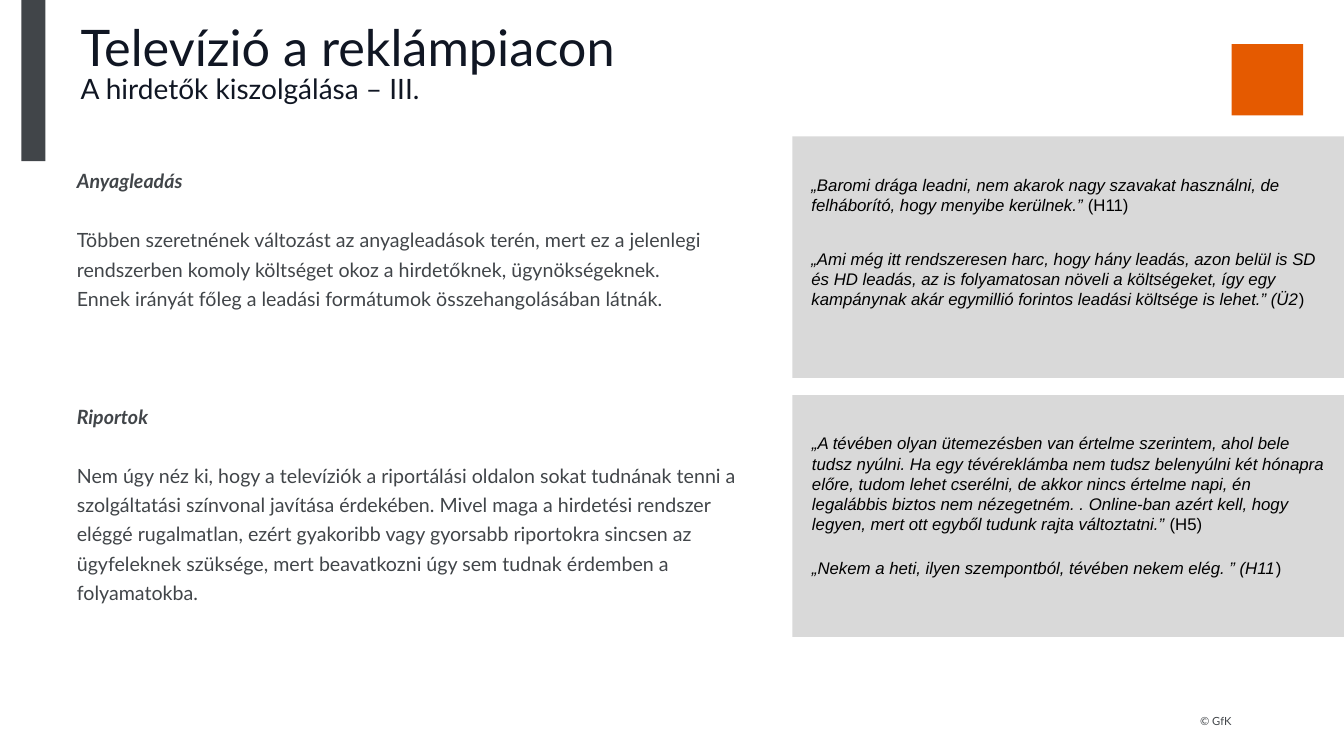
"""Builds the slide on serving television advertisers."""
from dataclasses import dataclass

from pptx import Presentation
from pptx.dml.color import RGBColor
from pptx.enum.shapes import MSO_SHAPE
from pptx.enum.text import MSO_ANCHOR, MSO_AUTO_SIZE, PP_ALIGN
from pptx.slide import Slide
from pptx.text.text import TextFrame, _Paragraph
from pptx.util import Pt

COLORS = {"slate": "414549", "navy": "101623", "orange": "E55A00", "gray": "D9D9D9", "black": "000000"}


@dataclass
class Block:
    """A rectangle of plain colour."""
    left: float
    top: float
    width: float
    height: float
    color: str


@dataclass
class Quote:
    """An interview quote and the upright end of its source mark."""
    left: float
    top: float
    text: str
    ending: str


@dataclass
class Passage:
    """A paragraph of the main text."""
    text: str
    before: float = 0
    heading: bool = False


BLOCKS = [
    Block(886.3, 0, 0, 0, "orange"),
    Block(15.2, 0, 17.2, 115.2, "slate"),
    Block(566, 97.4, 394, 172.6, "gray"),
    Block(566, 282.3, 394, 172.6, "gray"),
]
BLOCKS[0] = Block(879.8, 31.5, 51, 51, "orange")

QUOTES = [
    Quote(579.6, 118.8, "„Baromi drága leadni, nem akarok nagy szavakat használni, de felháborító, "
          "hogy menyibe kerülnek.” ", "(H11)"),
    Quote(579.6, 171.6, "„Ami még itt rendszeresen harc, hogy hány leadás, azon belül is SD és HD leadás, "
          "az is folyamatosan növeli a költségeket, így egy kampánynak akár egymillió forintos "
          "leadási költsége is lehet.” (Ü2", ")"),
    Quote(580, 303.6, "„A tévében olyan ütemezésben van értelme szerintem, ahol bele tudsz nyúlni. "
          "Ha egy tévéreklámba nem tudsz belenyúlni két hónapra előre, tudom lehet cserélni, de akkor "
          "nincs értelme napi, én legalábbis biztos nem nézegetném. . Online-ban azért kell, hogy legyen, "
          "mert ott egyből tudunk rajta változtatni.” ", "(H5)"),
    Quote(580, 392.4, "„Nekem a heti, ilyen szempontból, tévében nekem elég. ” (H11", ")"),
]

PASSAGES = [
    Passage("Anyagleadás", heading=True),
    Passage("Többen szeretnének változást az anyagleadások terén, mert ez a jelenlegi rendszerben komoly "
            "költséget okoz a hirdetőknek, ügynökségeknek.", 21),
    Passage("Ennek irányát főleg a leadási formátumok összehangolásában látnák."),
    Passage("Riportok", 63, True),
    Passage("Nem úgy néz ki, hogy a televíziók a riportálási oldalon sokat tudnának tenni a szolgáltatási "
            "színvonal javítása érdekében. Mivel maga a hirdetési rendszer eléggé rugalmatlan, ezért gyakoribb "
            "vagy gyorsabb riportokra sincsen az ügyfeleknek szüksége, mert beavatkozni úgy sem tudnak "
            "érdemben a folyamatokba.", 21),
]


def add_run(p: _Paragraph, text: str, *, size: float, font: str = "Lato", color: str = "slate",
            bold: bool = False, italic: bool = False) -> None:
    """Add formatted text to a paragraph."""
    r = p.add_run()
    r.text = text
    r.font.name, r.font.size = font, Pt(size)
    r.font.bold, r.font.italic = bold, italic
    r.font.color.rgb = RGBColor.from_string(COLORS[color])


def set_frame(tf: TextFrame, top: float = 0, anchor: MSO_ANCHOR = MSO_ANCHOR.TOP) -> None:
    """Set wrapping, margins and anchor of a text frame."""
    tf.word_wrap, tf.auto_size, tf.vertical_anchor = True, MSO_AUTO_SIZE.NONE, anchor
    tf.margin_left = tf.margin_right = tf.margin_bottom = 0
    tf.margin_top = Pt(top)


def add_box(s: Slide, left: float, top: float, width: float, height: float, *,
            margin_top: float = 0, anchor: MSO_ANCHOR = MSO_ANCHOR.TOP) -> TextFrame:
    """Add a text box and return its frame."""
    tf = s.shapes.add_textbox(Pt(left), Pt(top), Pt(width), Pt(height)).text_frame
    set_frame(tf, margin_top, anchor)
    return tf


def add_block(s: Slide, block: Block) -> None:
    """Draw a plain rectangle."""
    sp = s.shapes.add_shape(MSO_SHAPE.RECTANGLE, Pt(block.left), Pt(block.top), Pt(block.width), Pt(block.height))
    sp.shadow.inherit = False
    sp.fill.solid()
    sp.fill.fore_color.rgb = RGBColor.from_string(COLORS[block.color])
    sp.line.fill.background()


def add_title(s: Slide) -> None:
    """Place and fill the title."""
    sp = s.shapes.title
    sp.left, sp.top, sp.width, sp.height = Pt(57.6), Pt(18), Pt(608.4), Pt(38.9)
    set_frame(sp.text_frame)
    p = sp.text_frame.paragraphs[0]
    p.alignment, p.line_spacing = PP_ALIGN.LEFT, 0.85
    add_run(p, "Televízió a reklámpiacon", size=36, color="navy")
    p.add_line_break()
    add_run(p, "A hirdetők kiszolgálása – III.", size=20, color="navy")


def add_passages(s: Slide, passages: list[Passage]) -> None:
    """Write the main text."""
    tf = add_box(s, 54.9, 116.8, 479.5, 390.8)
    for i, passage in enumerate(passages):
        p = tf.add_paragraph() if i else tf.paragraphs[0]
        p.line_spacing, p.space_before = 1.25, Pt(passage.before)
        add_run(p, passage.text, size=14, bold=passage.heading, italic=passage.heading)


def add_quote(s: Slide, quote: Quote) -> None:
    """Write one interview quote."""
    p = add_box(s, quote.left, quote.top, 368.6, 54.7, margin_top=5.8).paragraphs[0]
    add_run(p, quote.text, size=12, font="Arial", color="black", italic=True)
    add_run(p, quote.ending, size=12, font="Arial", color="black")


def add_copyright(s: Slide) -> None:
    """Write the copyright line."""
    p = add_box(s, 840.2, 509, 39.6, 10.8, anchor=MSO_ANCHOR.BOTTOM).paragraphs[0]
    p.alignment, p.line_spacing = PP_ALIGN.RIGHT, 1.25
    add_run(p, "© GfK", size=8)


def main() -> None:
    """Build and save the presentation."""
    prs = Presentation()
    prs.slide_width, prs.slide_height = Pt(960), Pt(540)
    s = prs.slides.add_slide(prs.slide_layouts[5])
    add_title(s)
    for block in BLOCKS:
        add_block(s, block)
    add_copyright(s)
    add_passages(s, PASSAGES)
    for quote in QUOTES:
        add_quote(s, quote)
    prs.save("out.pptx")


if __name__ == "__main__":
    main()
